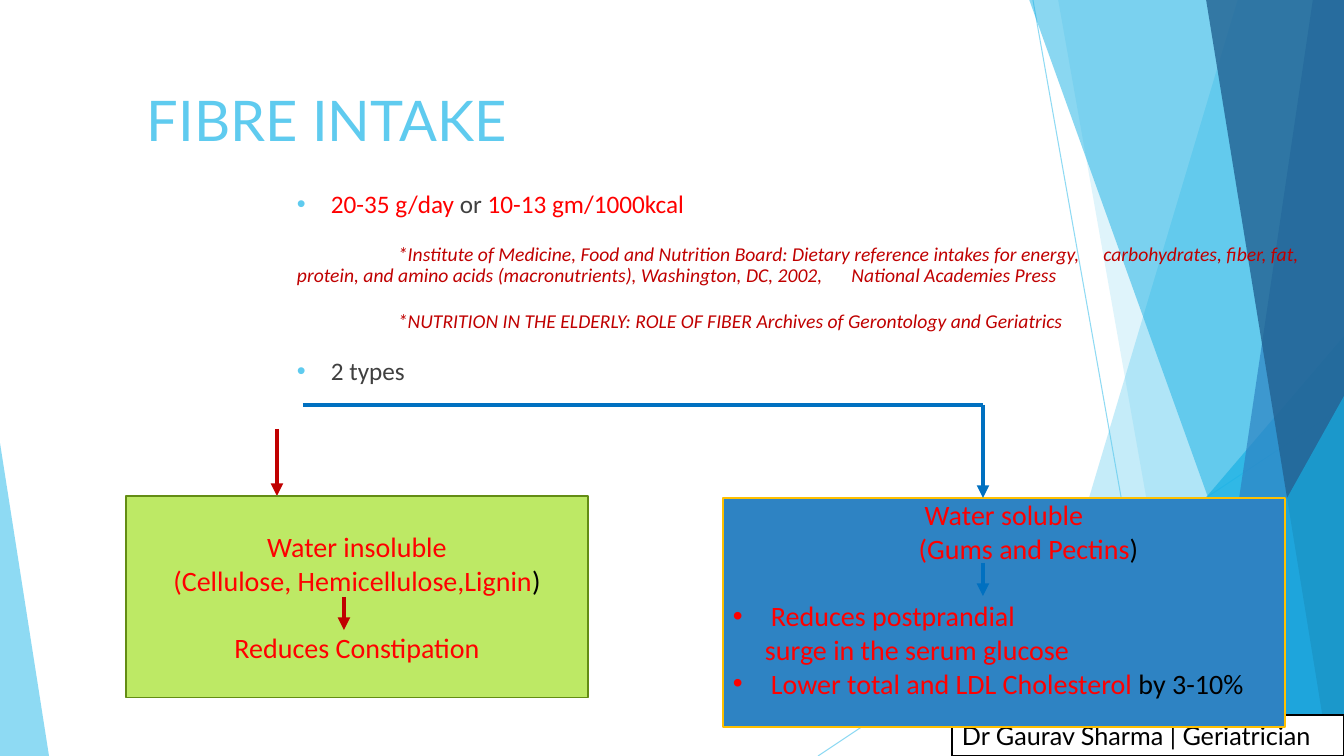
from lxml.etree import SubElement
from pptx import Presentation
from pptx.dml.color import RGBColor
from pptx.enum.shapes import MSO_CONNECTOR, MSO_SHAPE
from pptx.enum.text import MSO_ANCHOR, PP_ALIGN
from pptx.oxml.ns import qn
from pptx.util import Pt

PX = 9144000 / 1008
WIDTH, HEIGHT = 1344, 756
COLORS = {
    "sky": "5FCBEF", "cyan": "17B0E4", "blue": "2E83C3", "navy": "226292",
    "arrow_blue": "0070C0", "dark_red": "C00000", "red": "FF0000",
    "grey": "404040", "black": "000000", "white": "FFFFFF",
    "lime": "BDE965", "olive": "638C14", "gold": "FFC000",
}


def emu(*lengths):
    return [round(length * PX) for length in lengths]


def rgb(name):
    return RGBColor.from_string(COLORS[name])


def set_opacity(color_format_parent, percent):
    color = color_format_parent.find(".//" + qn("a:srgbClr"))
    SubElement(color, qn("a:alpha"), val=str(percent * 1000))


def paint(shape, fill, opacity=100, border=None, border_width=0.85):
    shape.shadow.inherit = False
    shape.fill.solid()
    shape.fill.fore_color.rgb = rgb(fill)
    if opacity < 100:
        set_opacity(shape.fill._xPr, opacity)
    if border:
        shape.line.color.rgb = rgb(border)
        shape.line.width = Pt(border_width)
    else:
        shape.line.fill.background()


def add_line(slide, start, end, color, width=3, arrow=False, opacity=100):
    line = slide.shapes.add_connector(MSO_CONNECTOR.STRAIGHT, *emu(*start, *end))
    line.line.color.rgb = rgb(color)
    line.line.width = Pt(width)
    stroke = line.line._get_or_add_ln()
    if opacity < 100:
        set_opacity(stroke, opacity)
    if arrow:
        SubElement(stroke, qn("a:tailEnd"), type="triangle")
    SubElement(line._element.spPr, qn("a:effectLst"))


def set_frame(shape, insets, anchor=MSO_ANCHOR.TOP):
    frame = shape.text_frame
    frame.word_wrap = True
    frame.vertical_anchor = anchor
    (frame.margin_left, frame.margin_top,
     frame.margin_right, frame.margin_bottom) = emu(*insets)
    return frame


def add_paragraph(frame, runs, size, face="Calibri", align=PP_ALIGN.LEFT, before=0,
                  spacing=None, margin=0, indent=0, bullet=None, tabs=(), italic=False):
    first = frame.paragraphs[0]
    paragraph = frame.add_paragraph() if first.runs else first
    paragraph.alignment = align
    paragraph.space_before = Pt(before)
    if spacing:
        paragraph.line_spacing = spacing
    props = paragraph._p.get_or_add_pPr()
    props.set("marL", str(*emu(margin)))
    props.set("indent", str(*emu(indent)))
    if bullet:
        SubElement(SubElement(props, qn("a:buClr")), qn("a:srgbClr"), val=COLORS[bullet])
        SubElement(props, qn("a:buFont"), typeface="Arial")
        SubElement(props, qn("a:buChar"), char="•")
    if tabs:
        stops = SubElement(props, qn("a:tabLst"))
        for stop in emu(*tabs):
            SubElement(stops, qn("a:tab"), pos=str(stop), algn="l")
    for text, color in runs:
        run = paragraph.add_run()
        run.text = text
        run.font.name = face
        run.font.size = Pt(size)
        run.font.italic = italic
        run.font.color.rgb = rgb(color)


def add_facet(slide, top_x, bottom_x, color, opacity):
    """Band from a slanted left edge to the right side of the slide."""
    builder = slide.shapes.build_freeform(top_x, -1, scale=PX)
    builder.add_line_segments([(WIDTH, -1), (WIDTH, HEIGHT), (bottom_x, HEIGHT)])
    paint(builder.convert_to_shape(), color, opacity)


def add_corner(slide, box, apex, color, opacity):
    corner = slide.shapes.add_shape(MSO_SHAPE.ISOSCELES_TRIANGLE, *emu(*box))
    corner.adjustments[0] = apex
    paint(corner, color, opacity)


def add_backdrop(slide):
    add_line(slide, (1033, 0), (1167, HEIGHT), "sky", 0.75, opacity=70)
    add_line(slide, (WIDTH, 406), (818, HEIGHT), "sky", 0.75, opacity=70)
    add_facet(slide, 1238, 1012, "sky", 36)
    add_facet(slide, 1058, 1192, "sky", 20)
    add_corner(slide, (985, 336, 359, 420), 1, "cyan", 66)
    add_facet(slide, 1029, 1301, "cyan", 50)
    add_facet(slide, 1313, 1201, "blue", 70)
    add_facet(slide, 1206, 1329, "navy", 80)
    add_corner(slide, (1143, 396, 201, 360), 1, "cyan", 66)
    add_corner(slide, (0, 443, 49, 313), 0, "sky", 70)


def add_author(slide, box):
    author = slide.shapes.add_shape(MSO_SHAPE.RECTANGLE, *emu(*box))
    paint(author, "white", border="black", border_width=1.5)
    frame = set_frame(author, (10, 5, 10, 5))
    add_paragraph(frame, [("Dr Gaurav Sharma | Geriatrician", "black")], 18, "Lato")


def add_title(slide, box):
    title = slide.shapes.add_textbox(*emu(*box))
    frame = set_frame(title, (13, 7, 13, 7), MSO_ANCHOR.BOTTOM)
    add_paragraph(frame, [("FIBRE INTAKE", "sky")], 40, "Lato")


def add_intake(slide, box):
    frame = set_frame(slide.shapes.add_textbox(*emu(*box)), (13, 7, 13, 7))
    point = dict(size=18, spacing=0.9, margin=34, indent=-34, bullet="sky")
    citation = dict(size=14, spacing=0.9, before=18, indent=101, tabs=(655, 857), italic=True)
    add_paragraph(frame, [("20-35 g/day ", "red"), ("or ", "grey"),
                          ("10-13 gm/1000kcal", "red")], **point)
    add_paragraph(frame, [(
        "*Institute of Medicine, Food and Nutrition Board: Dietary reference intakes for "
        "energy, \tcarbohydrates, fiber, fat, protein, and amino acids (macronutrients), "
        "Washington, DC, 2002, \tNational Academies Press", "dark_red")], **citation)
    add_paragraph(frame, [(
        "*NUTRITION IN THE ELDERLY: ROLE OF FIBER Archives of Gerontology and Geriatrics",
        "dark_red")], **citation)
    add_paragraph(frame, [("2 types", "grey")], before=18, **point)


def add_insoluble(slide, box):
    left, top, _, _ = box
    add_line(slide, (left + 151, top - 67), (left + 151, top), "dark_red", arrow=True)
    card = slide.shapes.add_shape(MSO_SHAPE.RECTANGLE, *emu(*box))
    paint(card, "lime", border="olive")
    frame = set_frame(card, (10, 5, 10, 5), MSO_ANCHOR.MIDDLE)
    centred = dict(size=20, align=PP_ALIGN.CENTER)
    add_paragraph(frame, [("Water insoluble", "red")], **centred)
    add_paragraph(frame, [("(Cellulose, Hemicellulose,Lignin", "red"), (")", "black")], **centred)
    add_paragraph(frame, [("Reduces Constipation", "red")], before=24, **centred)
    add_line(slide, (left + 218, top + 101), (left + 218, top + 134), "dark_red", arrow=True)


def add_soluble(slide, box):
    left, top, _, _ = box
    stem, branch = left + 260, top - 93
    card = slide.shapes.add_shape(MSO_SHAPE.RECTANGLE, *emu(*box))
    paint(card, "blue", border="gold")
    frame = set_frame(card, (10, 0, 10, 0))
    centred = dict(size=20, align=PP_ALIGN.CENTER)
    effect = dict(size=20, margin=38, indent=-38, bullet="red")
    add_paragraph(frame, [("Water soluble", "red")], **centred)
    add_paragraph(frame, [("(Gums and Pectins", "red"), (")", "black")], margin=49, **centred)
    add_paragraph(frame, [("Reduces postprandial", "red")], before=24, **effect)
    add_paragraph(frame, [("surge in the serum glucose", "red")], 20, margin=32)
    add_paragraph(frame, [("Lower total and LDL Cholesterol ", "red"),
                          ("by 3-10%", "black")], **effect)
    add_line(slide, (stem, branch), (stem, top), "arrow_blue", arrow=True)
    add_line(slide, (left - 420, branch), (stem, branch), "arrow_blue")
    add_line(slide, (stem, top + 65), (stem, top + 98), "arrow_blue", arrow=True)


def main():
    deck = Presentation()
    deck.slide_width, deck.slide_height = emu(WIDTH, HEIGHT)
    slide = deck.slides.add_slide(deck.slide_layouts[6])
    add_backdrop(slide)
    add_author(slide, (952, 715, 392, 41))
    add_title(slide, (134, 17, 1075, 143))
    add_intake(slide, (284, 185, 1075, 504))
    add_insoluble(slide, (126, 496, 462, 202))
    add_soluble(slide, (723, 498, 562, 229))
    deck.save("out.pptx")


if __name__ == "__main__":
    main()
